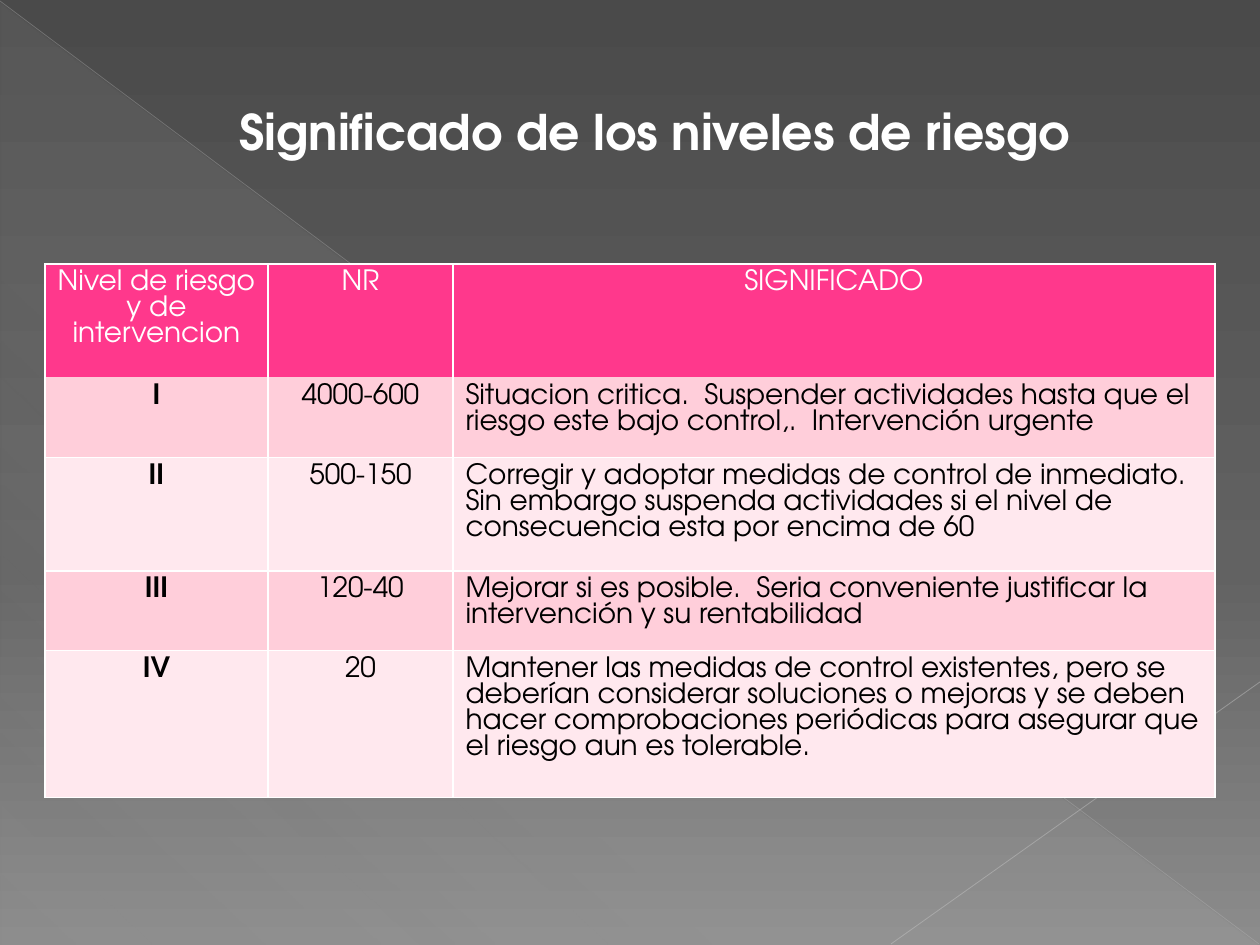
import pptx
import pptx.dml.color
import pptx.enum.shapes
import pptx.enum.text
import pptx.oxml
import pptx.oxml.ns
import pptx.util

PX = 914400 // 126
FONT = "TeX Gyre Adventor"
COLORS = {
    "white": "FFFFFF", "black": "000000", "header": "FF388C",
    "band_dark": "FFCEDA", "band_light": "FFE8EE",
    "diagonal": "BFBFBF", "corner": "C6C6C6", "haze": "D2D2D2",
    "sky_top": "4A4A4A", "sky_middle": "626262", "sky_bottom": "8C8C8C",
}
COLUMN_WIDTHS = [223, 185, 762]
ROW_HEIGHTS = [113, 80, 113, 80, 147]
HEADINGS = ["Nivel de riesgo y de intervencion", "NR", "SIGNIFICADO"]
LEVELS = [
    ("I", "4000-600", "Situacion critica.  Suspender actividades hasta que el riesgo "
     "este bajo control,.  Intervención urgente"),
    ("II", "500-150", "Corregir y adoptar medidas de control de inmediato.  Sin embargo "
     "suspenda actividades si el nivel de consecuencia esta por encima de 60"),
    ("III", "120-40", "Mejorar si es posible.  Seria conveniente justificar la "
     "intervención y su rentabilidad"),
    ("IV", "20", "Mantener las medidas de control existentes, pero se deberían considerar "
     "soluciones o mejoras y se deben hacer comprobaciones periódicas para asegurar que "
     "el riesgo aun es tolerable."),
]
ALIGN = pptx.enum.text.PP_ALIGN


def px(*lengths):
    return [length * PX for length in lengths]


def rgb(name):
    return pptx.dml.color.RGBColor.from_string(COLORS[name])


def make_element(xml):
    namespace = pptx.oxml.ns.nsdecls("a")
    return pptx.oxml.parse_xml(xml.replace(">", f" {namespace}>", 1))


def set_gradient(fill, owner, angle, stops):
    """Fill with (position %, colour, opacity %) stops; angle is clockwise."""
    fill.gradient()
    gradient = next(owner.iter(pptx.oxml.ns.qn("a:gradFill")))
    for child in list(gradient):
        gradient.remove(child)
    marks = "".join(
        f'<a:gs pos="{position * 1000}"><a:srgbClr val="{COLORS[color]}">'
        f'<a:alpha val="{opacity * 1000}"/></a:srgbClr></a:gs>'
        for position, color, opacity in stops)
    gradient.append(make_element(f"<a:gsLst>{marks}</a:gsLst>"))
    gradient.append(make_element(f'<a:lin ang="{angle * 60000}" scaled="0"></a:lin>'))


def write_text(frame, text, align, color, **font_values):
    frame.word_wrap = True
    paragraph = frame.paragraphs[0]
    paragraph.alignment = align
    run = paragraph.add_run()
    run.text = text
    run.font.color.rgb = rgb(color)
    for attribute, value in {"name": FONT, **font_values}.items():
        setattr(run.font, attribute, value)


def add_haze(slide):
    triangle = slide.shapes.add_shape(
        pptx.enum.shapes.MSO_SHAPE.RIGHT_TRIANGLE, *px(1, 3, 1257, 942))
    triangle.shadow.inherit = False
    triangle.line.fill.background()
    set_gradient(triangle.fill, triangle._element.spPr, 133,
                 [(0, "haze", 10), (70, "haze", 8), (100, "haze", 1)])


def add_ray(slide, ends, color, width, opacity):
    ray = slide.shapes.add_connector(
        pptx.enum.shapes.MSO_CONNECTOR.STRAIGHT, *px(*ends))
    ray.line.width = pptx.util.Pt(width)
    ray.line.color.rgb = rgb(color)
    properties = ray._element.spPr
    next(properties.iter(pptx.oxml.ns.qn("a:srgbClr"))).append(
        make_element(f'<a:alpha val="{opacity * 1000}"></a:alpha>'))
    properties.append(make_element("<a:effectLst></a:effectLst>"))


def add_title(slide):
    title = slide.shapes.add_textbox(*px(94, 95, 1121, 72))
    write_text(title.text_frame, "Significado de los niveles de riesgo", ALIGN.CENTER,
               color="white", size=pptx.util.Pt(28), bold=True)


def set_borders(cell, hidden_side):
    """Draw thin white borders on all sides but the hidden one."""
    properties = cell._tc.get_or_add_tcPr()
    white = f'<a:solidFill><a:srgbClr val="{COLORS["white"]}"/></a:solidFill>'
    for index, side in enumerate(("lnL", "lnR", "lnT", "lnB")):
        paint = "<a:noFill/>" if side == hidden_side else white
        properties.insert(index, make_element(
            f'<a:{side} w="12700">{paint}</a:{side}>'))


def add_risk_table(slide):
    table = slide.shapes.add_table(
        len(ROW_HEIGHTS), len(COLUMN_WIDTHS),
        *px(45, 264, sum(COLUMN_WIDTHS), sum(ROW_HEIGHTS))).table
    for column, width in zip(table.columns, COLUMN_WIDTHS):
        column.width = width * PX
    for row, height in zip(table.rows, ROW_HEIGHTS):
        row.height = height * PX

    hidden_sides = {0: "lnB", 1: "lnT"}
    for row_index, texts in enumerate([HEADINGS, *LEVELS]):
        is_header = row_index == 0
        band = "band_dark" if row_index % 2 else "band_light"
        for column_index, text in enumerate(texts):
            cell = table.cell(row_index, column_index)
            cell.fill.solid()
            cell.fill.fore_color.rgb = rgb("header" if is_header else band)
            is_meaning = column_index == 2 and not is_header
            write_text(cell.text_frame, text,
                       ALIGN.LEFT if is_meaning else ALIGN.CENTER,
                       color="white" if is_header else "black",
                       size=pptx.util.Pt(16),
                       bold=column_index == 0 and not is_header)
            set_borders(cell, hidden_sides.get(row_index))


def main():
    presentation = pptx.Presentation()
    presentation.slide_width, presentation.slide_height = px(1260, 945)
    slide = presentation.slides.add_slide(presentation.slide_layouts[6])
    set_gradient(slide.background.fill, slide._element, 90,
                 [(0, "sky_top", 100), (60, "sky_middle", 100), (100, "sky_bottom", 100)])
    add_haze(slide)
    add_ray(slide, (0, 1, 1259, 944), "diagonal", 0.39, 35)
    add_ray(slide, (1260, 682, 891, 944), "corner", 0.47, 45)
    add_title(slide)
    add_risk_table(slide)
    presentation.save("out.pptx")


if __name__ == "__main__":
    main()
